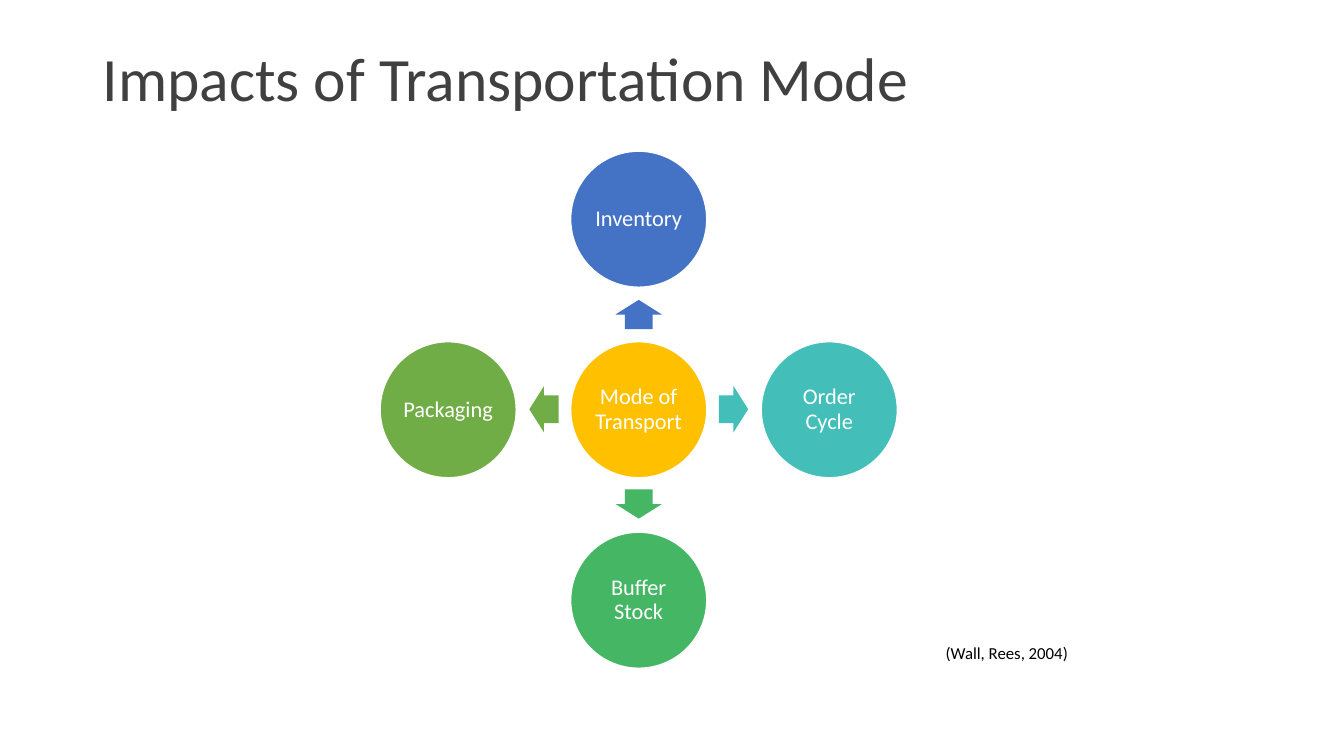
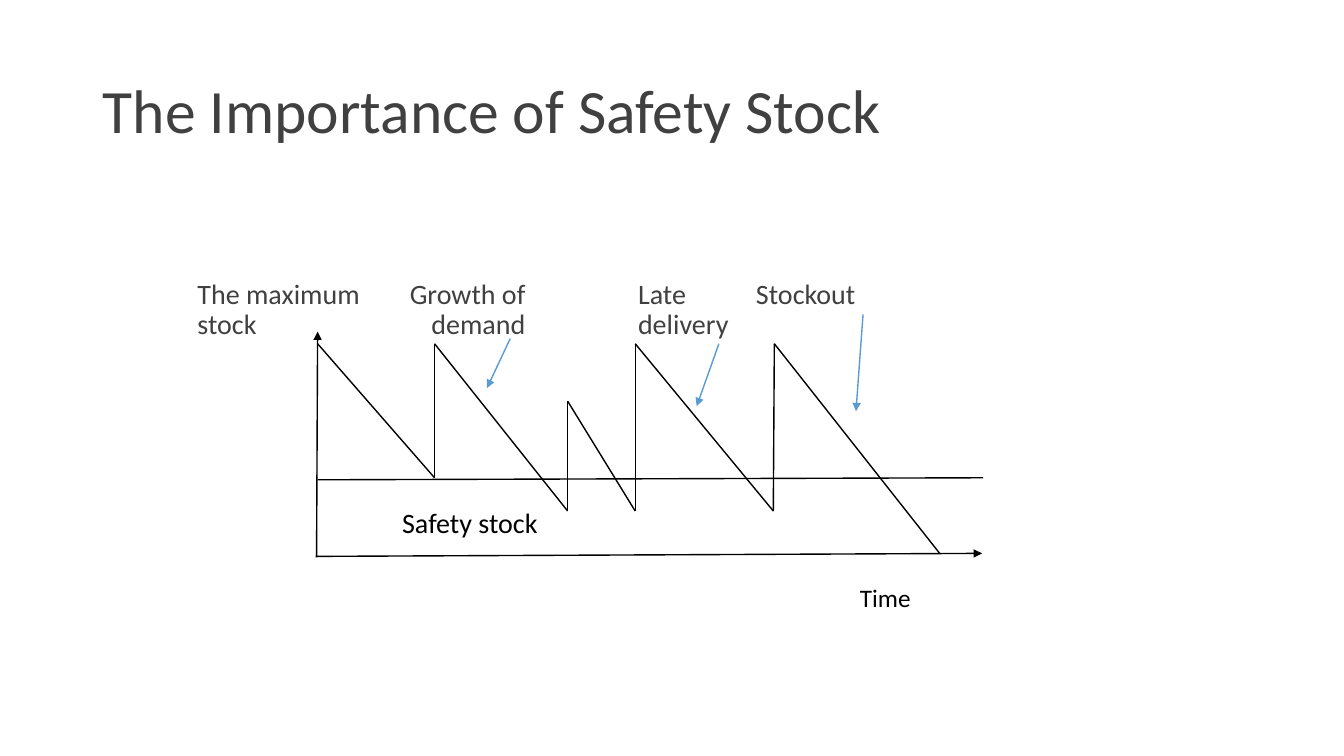
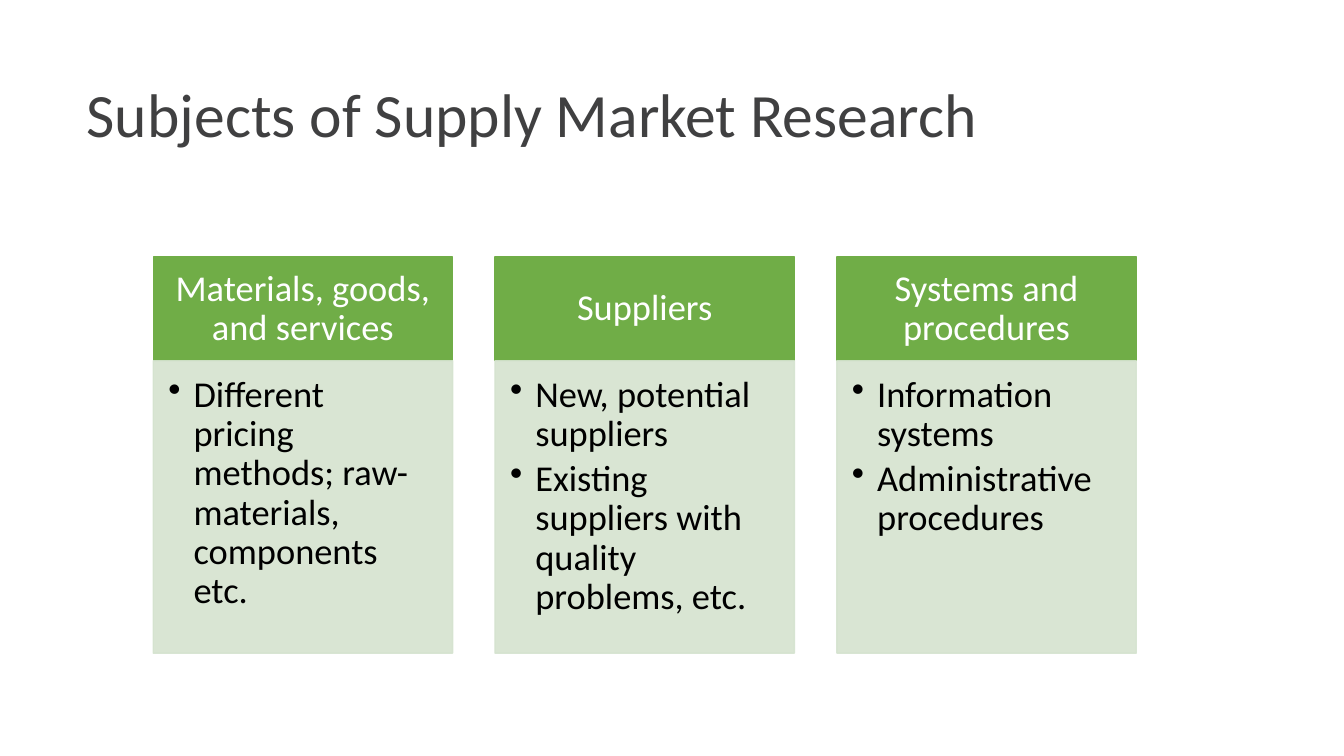
import itertools

import lxml.etree
import pptx
import pptx.dml.color
import pptx.enum.shapes
import pptx.enum.text
import pptx.oxml.ns
import pptx.util

EMU_PER_PX = 9144  # 100 px to the inch
FONT = "Calibri"
COLOURS = {
    "title": "404041",
    "black": "000000",
    "white": "FFFFFF",
    "gold": "FFC000",
    "blue": "4472C4",
    "teal": "43BEB9",
    "emerald": "45B664",
    "green": "70AD47",
    "pale green": "D5E3CF",
    "pointer": "5B9BD5",
}
SHAPES = pptx.enum.shapes.MSO_SHAPE
ALIGN = pptx.enum.text.PP_ALIGN
ANCHOR = pptx.enum.text.MSO_ANCHOR


def px(length):
    return pptx.util.Emu(length * EMU_PER_PX)


def rgb(name):
    return pptx.dml.color.RGBColor.from_string(COLOURS[name])


def add_xml(parent, tag, **attributes):
    return lxml.etree.SubElement(parent, pptx.oxml.ns.qn(tag), attributes)


def write(frame, *texts, size=20, colour="black", align=ALIGN.LEFT, anchor=ANCHOR.TOP,
          insets=(10, 5, 10, 5), spacing=1.0, after=0, bullet=None, wrap=True):
    """Fill a text frame with one paragraph per text; insets run left, top, right, bottom."""
    frame.word_wrap = wrap
    frame.auto_size = pptx.enum.text.MSO_AUTO_SIZE.NONE
    frame.vertical_anchor = anchor
    (frame.margin_left, frame.margin_top,
     frame.margin_right, frame.margin_bottom) = map(px, insets)
    for index, text in enumerate(texts):
        para = frame.add_paragraph() if index else frame.paragraphs[0]
        para.alignment = align
        para.line_spacing = spacing
        para.space_before = pptx.util.Pt(0)
        para.space_after = pptx.util.Pt(after)
        if bullet:
            properties = para._p.get_or_add_pPr()
            properties.set("marL", str(px(25)))
            properties.set("indent", str(px(-25)))
            add_xml(properties, "a:buChar", char=bullet)
        span = para.add_run()
        span.text = text
        span.font.name = FONT
        span.font.size = pptx.util.Pt(size)
        span.font.color.rgb = rgb(colour)


class Builder:
    """Holds the deck and the slide being drawn."""

    def __init__(self):
        self.deck = pptx.Presentation()
        self.deck.slide_width = px(1333)
        self.deck.slide_height = px(750)
        self.slide = None

    def add_slide(self, title, left, top, width, height):
        self.slide = self.deck.slides.add_slide(self.deck.slide_layouts[5])
        box = self.slide.shapes.title
        box.left, box.top, box.width, box.height = map(px, (left, top, width, height))
        write(box.text_frame, title, size=44, colour="title", anchor=ANCHOR.MIDDLE, spacing=0.9)

    def text(self, text, left, top, width, height, **style):
        box = self.slide.shapes.add_textbox(*map(px, (left, top, width, height)))
        write(box.text_frame, text, **style)

    def shape(self, kind, left, top, width, height, fill, line=None, opacity=100):
        shape = self.slide.shapes.add_shape(kind, *map(px, (left, top, width, height)))
        shape.shadow.inherit = False
        shape.fill.solid()
        shape.fill.fore_color.rgb = rgb(fill)
        if line:
            shape.line.color.rgb = rgb(line)
            shape.line.width = pptx.util.Pt(1)
        else:
            shape.line.fill.background()
        if opacity < 100:
            for colour in shape._element.spPr.iter(pptx.oxml.ns.qn("a:srgbClr")):
                add_xml(colour, "a:alpha", val=str(opacity * 1000))
        return shape

    def line(self, start, end, colour="black", arrow=False):
        line = self.slide.shapes.add_connector(
            pptx.enum.shapes.MSO_CONNECTOR.STRAIGHT, *map(px, (*start, *end)))
        line.line.color.rgb = rgb(colour)
        line.line.width = pptx.util.Pt(1)
        if arrow:
            add_xml(line.line._get_or_add_ln(), "a:tailEnd", type="triangle")
        add_xml(line._element.spPr, "a:effectLst")


def transport_slide(builder):
    builder.add_slide("Impacts of Transportation Mode", 92, 40, 1150, 81)
    impacts = [
        ("Mode of Transport", "gold", 0, 0, None),
        ("Inventory", "blue", 0, -1, 270),
        ("Order Cycle", "teal", 1, 0, 0),
        ("Buffer Stock", "emerald", 0, 1, 90),
        ("Packaging", "green", -1, 0, 180),
    ]
    for label, colour, across, down, rotation in impacts:
        if rotation is not None:
            arrow = builder.shape(SHAPES.RIGHT_ARROW, 619 + 94 * across, 383 + 94 * down,
                                  29, 46, colour)
            arrow.adjustments[0] = 0.6
            arrow.adjustments[1] = 0.5
            arrow.rotation = rotation
        circle = builder.shape(SHAPES.OVAL, 566 + 189 * across, 339 + 189 * down,
                               135, 135, colour, line="white")
        write(circle.text_frame, label, size=16, colour="white", align=ALIGN.CENTER,
              anchor=ANCHOR.MIDDLE, insets=(2, 2, 2, 2), spacing=0.9)
    builder.text("(Wall, Rees, 2004)", 928, 633, 351, 30, size=12)


def safety_stock_slide(builder):
    builder.add_slide("The Importance of Safety Stock", 92, 40, 1150, 145)
    labels = [
        ("The maximum stock", 186, 200, ALIGN.LEFT),
        ("Growth of demand", 386, 145, ALIGN.RIGHT),
        ("Late delivery", 623, 120, ALIGN.LEFT),
        ("Stockout", 740, 130, ALIGN.LEFT),
    ]
    for label, left, width, align in labels:
        builder.text(label, left, 273, width, 72, colour="title", align=align, spacing=0.9)
    builder.text("Safety stock", 389, 497, 204, 44)
    builder.text("Time", 843, 573, 71, 40, size=18, wrap=False)

    builder.line((313, 552), (974, 549), arrow=True)
    builder.line((314, 553), (315, 329), arrow=True)
    builder.line((315, 476), (975, 474))
    stock_levels = [(315, 341), (431, 474), (431, 341), (563, 507), (563, 398),
                    (630, 507), (630, 341), (767, 507), (768, 341), (932, 549)]
    for start, end in itertools.pairwise(stock_levels):
        builder.line(start, end)
    pointers = [((506, 336), (483, 385)), ((713, 341), (691, 403)), ((856, 312), (849, 408))]
    for start, end in pointers:
        builder.line(start, end, "pointer", arrow=True)


def market_research_slide(builder):
    builder.add_slide("Subjects of Supply Market Research", 76, 50, 1041, 134)
    subjects = {
        "Materials, goods, and services": [
            "Different pricing methods; raw-materials, components etc."],
        "Suppliers": [
            "New, potential suppliers", "Existing suppliers with quality problems, etc."],
        "Systems and procedures": [
            "Information systems", "Administrative procedures"],
    }
    for column, (heading, points) in enumerate(subjects.items()):
        left = 152 + 339 * column
        header = builder.shape(SHAPES.RECTANGLE, left, 255, 297, 103, "green", line="green")
        write(header.text_frame, heading, size=26, colour="white", align=ALIGN.CENTER,
              anchor=ANCHOR.MIDDLE, insets=(20, 12, 20, 12), spacing=0.9)
        body = builder.shape(SHAPES.RECTANGLE, left, 358, 297, 290, "pale green",
                             line="pale green", opacity=90)
        write(body.text_frame, *points, size=26, insets=(15, 15, 20, 23),
              spacing=0.9, after=4, bullet="•")


def main():
    builder = Builder()
    transport_slide(builder)
    safety_stock_slide(builder)
    market_research_slide(builder)
    builder.deck.save("out.pptx")


if __name__ == "__main__":
    main()
